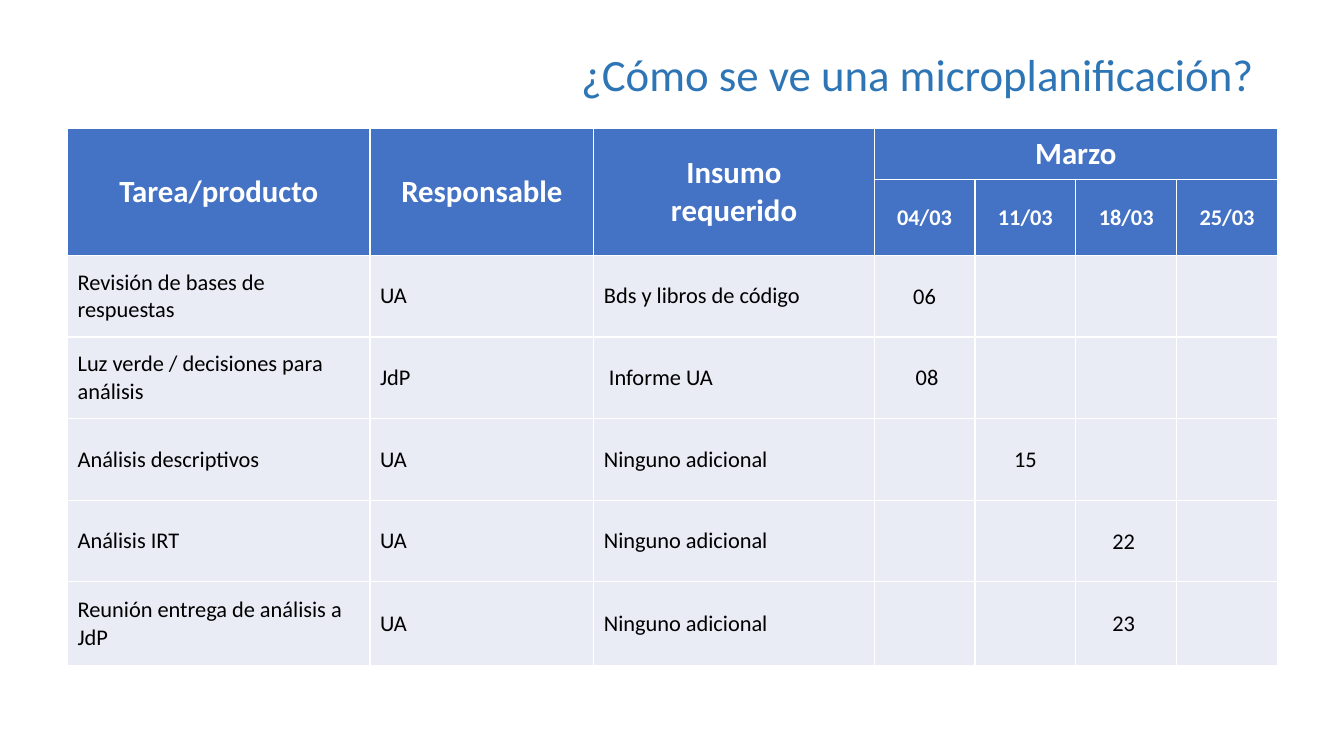
from lxml import etree
from pptx import Presentation
from pptx.dml.color import RGBColor
from pptx.enum.text import MSO_ANCHOR, MSO_AUTO_SIZE, PP_ALIGN
from pptx.oxml.ns import qn
from pptx.util import Inches, Pt

MIDDLE = MSO_ANCHOR.MIDDLE
NO_AUTOFIT = MSO_AUTO_SIZE.NONE
LEFT, CENTER, RIGHT = PP_ALIGN.LEFT, PP_ALIGN.CENTER, PP_ALIGN.RIGHT

FONT = "Calibri"
COLORS = {
    "title": "2E75B6",
    "header": "4472C4",
    "body": "E9EBF5",
    "white": "FFFFFF",
    "black": "000000",
}
COLUMN_WIDTHS = [3, 2.22, 2.78, 1, 1, 1, 1]
ROW_HEIGHTS = [0.51, 0.51, 0.81, 0.81, 0.81, 0.81, 0.83]
HEADINGS = ["Tarea/producto", "Responsable", "Insumo\nrequerido"]
MONTH = "Marzo"
WEEKS = ["04/03", "11/03", "18/03", "25/03"]
TASKS = [
    ("Revisión de bases de respuestas", "UA", "Bds y libros de código", "04/03", "06"),
    ("Luz verde / decisiones para análisis", "JdP", " Informe UA", "04/03", " 08"),
    ("Análisis descriptivos", "UA", "Ninguno adicional", "11/03", "15"),
    ("Análisis IRT", "UA", "Ninguno adicional", "18/03", "22 "),
    ("Reunión entrega de análisis a JdP", "UA", "Ninguno adicional", "18/03", "23 "),
]


def format_text(text_frame, size, color, alignment, bold=False):
    for paragraph in text_frame.paragraphs:
        paragraph.alignment = alignment
        paragraph.font.size = Pt(size)
        for run in paragraph.runs:
            run.font.name = FONT
            run.font.size = Pt(size)
            run.font.bold = bold
            run.font.color.rgb = RGBColor.from_string(COLORS[color])


def set_cell_style(cell, fill):
    properties = cell._tc.get_or_add_tcPr()
    for side in ("a:lnL", "a:lnR", "a:lnT", "a:lnB"):
        line = etree.SubElement(properties, qn(side), w=str(Pt(1)))
        solid = etree.SubElement(line, qn("a:solidFill"))
        etree.SubElement(solid, qn("a:srgbClr"), val=COLORS["white"])
    cell.fill.solid()
    cell.fill.fore_color.rgb = RGBColor.from_string(COLORS[fill])
    cell.vertical_anchor = MIDDLE


def set_tight_margins(cell):
    cell.margin_left = cell.margin_right = cell.margin_top = Inches(0.01)
    cell.margin_bottom = 0


def write_cell(cell, text, size, color, alignment, bold=False):
    cell.text_frame.text = text
    format_text(cell.text_frame, size, color, alignment, bold)
    if alignment == CENTER:
        set_tight_margins(cell)


def add_title(slide, left, top, width, height):
    title = slide.shapes.title
    title.left, title.top = Inches(left), Inches(top)
    title.width, title.height = Inches(width), Inches(height)
    text_frame = title.text_frame
    text_frame.text = "¿Cómo se ve una microplanificación?"
    text_frame.auto_size = NO_AUTOFIT
    text_frame.vertical_anchor = MIDDLE
    text_frame.paragraphs[0].line_spacing = 0.9
    format_text(text_frame, 32, "title", RIGHT)


def fill_header(table):
    first_week = len(HEADINGS)
    for column, heading in enumerate(HEADINGS):
        table.cell(0, column).merge(table.cell(1, column))
        write_cell(table.cell(0, column), heading, 22, "white", CENTER, True)
    table.cell(0, first_week).merge(table.cell(0, len(COLUMN_WIDTHS) - 1))
    write_cell(table.cell(0, first_week), MONTH, 22, "white", CENTER, True)
    for column, week in enumerate(WEEKS, first_week):
        write_cell(table.cell(1, column), week, 16, "white", CENTER, True)


def fill_tasks(table):
    for row, (*descriptions, week, day) in enumerate(TASKS, 2):
        for column, text in enumerate(descriptions):
            write_cell(table.cell(row, column), text, 16, "black", LEFT)
        day_cell = table.cell(row, len(HEADINGS) + WEEKS.index(week))
        write_cell(day_cell, day, 16, "black", CENTER)


def add_schedule(slide, left, top, width, height):
    frame = slide.shapes.add_table(
        len(ROW_HEIGHTS), len(COLUMN_WIDTHS),
        Inches(left), Inches(top), Inches(width), Inches(height),
    )
    table = frame.table
    table.horz_banding = False
    for column, column_width in zip(table.columns, COLUMN_WIDTHS):
        column.width = Inches(column_width)
    for index, row_height in enumerate(ROW_HEIGHTS):
        table.rows[index].height = Inches(row_height)
        for cell in table.rows[index].cells:
            set_cell_style(cell, "header" if index < 2 else "body")
    fill_header(table)
    fill_tasks(table)


def main():
    presentation = Presentation()
    presentation.slide_width = Inches(13.33)
    presentation.slide_height = Inches(7.5)
    slide = presentation.slides.add_slide(presentation.slide_layouts[5])
    add_title(slide, 1.71, 0.44, 10.83, 0.65)
    add_schedule(slide, 0.67, 1.27, sum(COLUMN_WIDTHS), sum(ROW_HEIGHTS))
    presentation.save("out.pptx")


if __name__ == "__main__":
    main()
